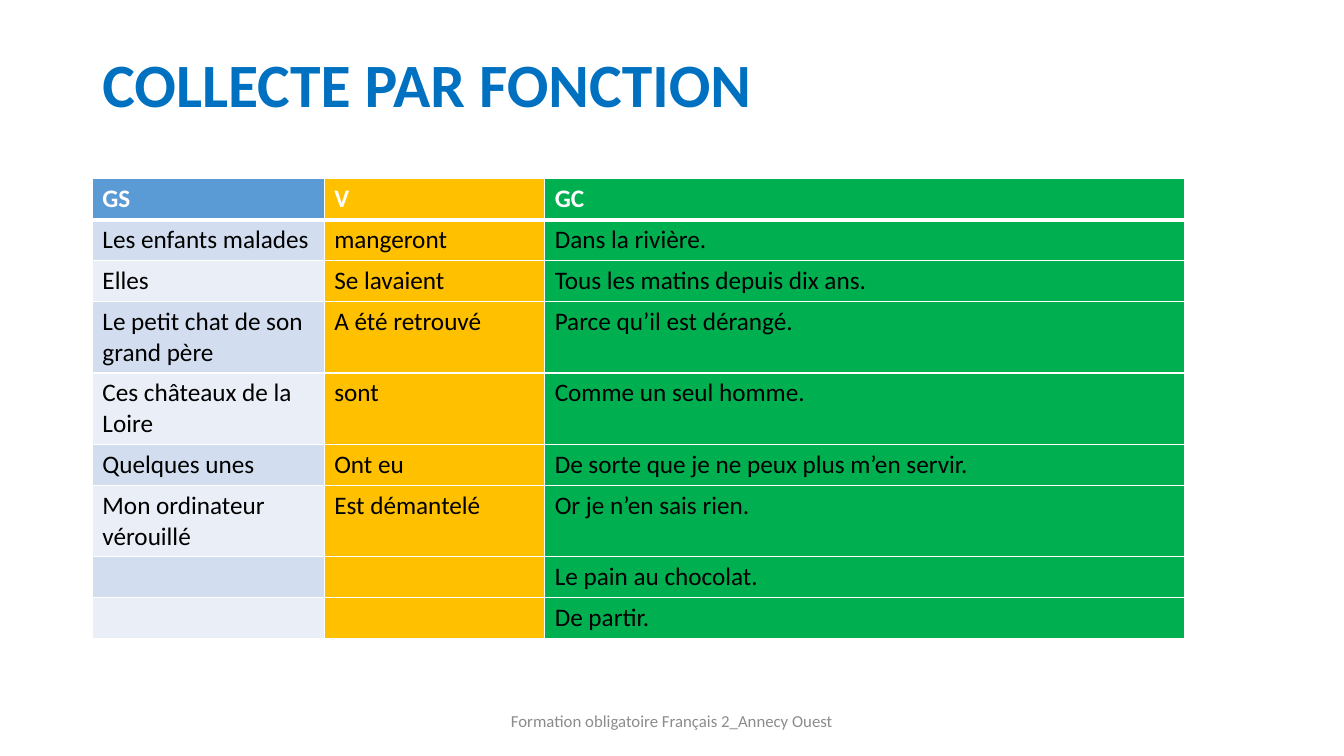
from pptx import Presentation
from pptx.dml.color import RGBColor as RGB
from pptx.enum.text import MSO_ANCHOR as Anchor, PP_ALIGN as Align
from pptx.oxml import parse_xml
from pptx.oxml.ns import nsdecls
from pptx.util import Pt

HUES = {
    "title": "0070C0", "foot": "8C8C8C", "white": "FFFFFF", "black": "000000",
    "blue": "5B9BD5", "odd": "D2DEEF", "even": "EAEFF7",
    "gold": "FFC000", "green": "00B050",
}
HEADS = ["GS", "V", "GC"]
ROWS = [
    ("Les enfants malades", "mangeront", "Dans la rivière."),
    ("Elles", "Se lavaient", "Tous les matins depuis dix ans."),
    ("Le petit chat de son grand père", "A été retrouvé", "Parce qu’il est dérangé."),
    ("Ces châteaux de la Loire", "sont", "Comme un seul homme."),
    ("Quelques unes", "Ont eu", "De sorte que je ne peux plus m’en servir."),
    ("Mon ordinateur vérouillé", "Est démantelé", "Or je n’en sais rien."),
    ("", "", "Le pain au chocolat."),
    ("", "", "De partir."),
]
WIDTHS = [165.6, 157.5, 457]
ONE, TWO = 29.2, 51.1  # heights of rows with one or two lines
TALL = {3, 4, 6}


def style(par, size, hue, bold=False):
    font = par.font
    font.name, font.size, font.bold = "Calibri", Pt(size), bold
    font.color.rgb = RGB.from_string(HUES[hue])


def add_text(slide, box, text, size, hue, bold=False, align=Align.LEFT):
    frame = slide.shapes.add_textbox(*map(Pt, box)).text_frame
    frame.word_wrap = True
    frame.vertical_anchor = Anchor.MIDDLE
    par = frame.paragraphs[0]
    par.text, par.alignment = text, align
    style(par, size, hue, bold)
    return par


def add_edges(cell, top, bottom):
    props = cell._tc.get_or_add_tcPr()
    edges = {"lnL": 1, "lnR": 1, "lnT": top, "lnB": bottom}
    for spot, (tag, width) in enumerate(edges.items()):
        props.insert(spot, parse_xml(
            f'<a:{tag} {nsdecls("a")} w="{Pt(width)}"><a:solidFill>'
            f'<a:srgbClr val="{HUES["white"]}"/></a:solidFill></a:{tag}>'))


def add_grid(slide, box):
    grid = slide.shapes.add_table(len(ROWS) + 1, len(HEADS), *map(Pt, box)).table
    for col, width in zip(grid.columns, WIDTHS):
        col.width = Pt(width)
    for r, texts in enumerate([HEADS, *ROWS]):
        grid.rows[r].height = Pt(TWO if r in TALL else ONE)
        first = "blue" if r == 0 else "odd" if r % 2 else "even"
        for c, (text, hue) in enumerate(zip(texts, (first, "gold", "green"))):
            cell = grid.cell(r, c)
            cell.text = text
            cell.fill.solid()
            cell.fill.fore_color.rgb = RGB.from_string(HUES[hue])
            style(cell.text_frame.paragraphs[0], 18,
                  "black" if r else "white", bold=r == 0)
            # A thicker rule parts the header from the body
            add_edges(cell, top=3 if r == 1 else 1, bottom=1 if r else 3)


def main():
    deck = Presentation()
    deck.slide_width, deck.slide_height = Pt(960), Pt(540)
    slide = deck.slides.add_slide(deck.slide_layouts[6])

    # Title
    title = add_text(slide, (66, 28.8, 828, 67.7), "COLLECTE PAR FONCTION",
                     44, "title", bold=True)
    title.line_spacing = 0.9

    # Table of word groups
    height = ONE * (len(ROWS) + 1 - len(TALL)) + TWO * len(TALL)
    add_grid(slide, (66, 127.7, sum(WIDTHS), height))

    # Footer
    add_text(slide, (318, 500.5, 324, 28.8),
             "Formation obligatoire Français 2_Annecy Ouest",
             12, "foot", align=Align.CENTER)
    deck.save("out.pptx")


if __name__ == "__main__":
    main()
